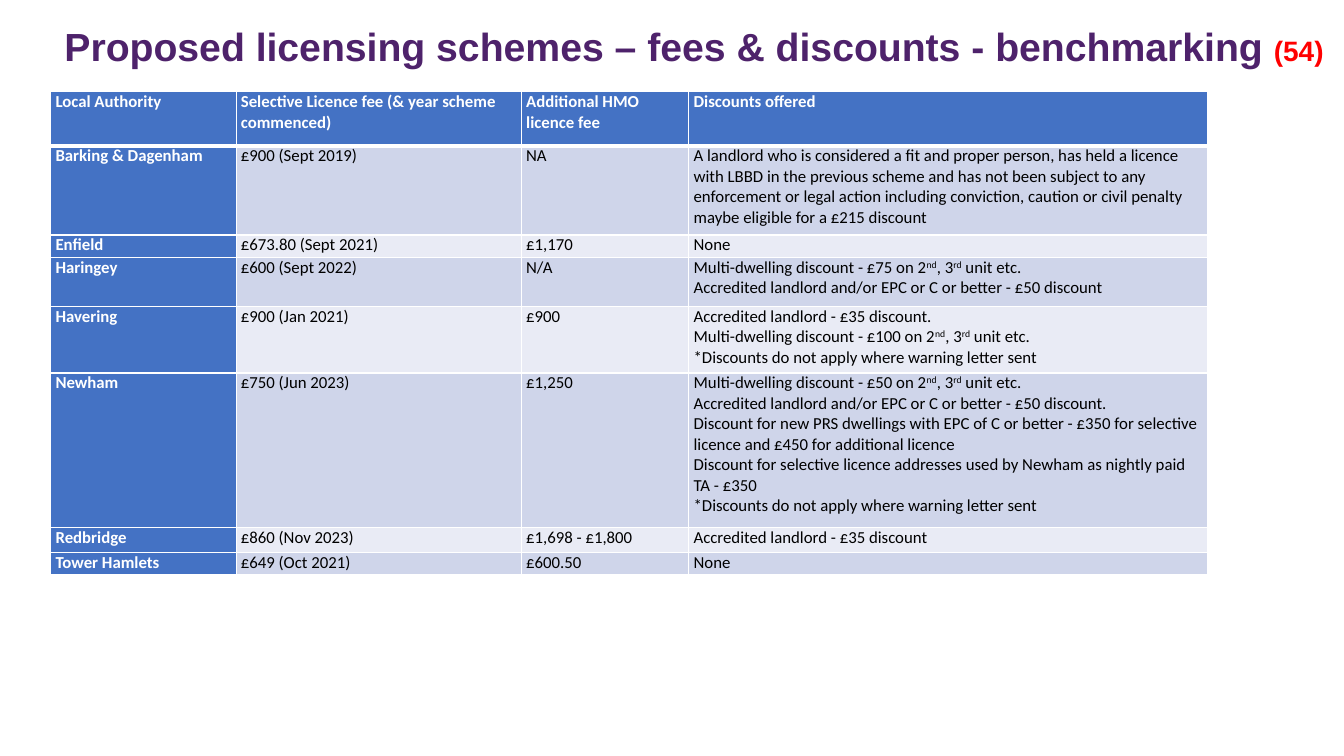
from lxml import etree
from pptx import Presentation
from pptx import util as u
from pptx.dml.color import RGBColor
from pptx.enum import text
from pptx.oxml.ns import qn

COLOURS = {
    "title": "4E226B",
    "page": "FF0000",
    "head": "4472C4",
    "odd": "CFD5EA",
    "even": "E9EBF5",
    "white": "FFFFFF",
    "black": "000000",
}

UNIT = "on 2^nd^, 3^rd^ unit etc."  # ^ marks superscript
WARNING = "*Discounts do not apply where warning letter sent"
ROWS = [
    ("Local Authority", "Selective Licence fee (& year scheme commenced)",
     "Additional HMO licence fee", "Discounts offered"),
    ("Barking & Dagenham", "£900 (Sept 2019)", "NA",
     "A landlord who is considered a fit and proper person, has held a licence "
     "with LBBD in the previous scheme and has not been subject to any "
     "enforcement or legal action including conviction, caution or civil "
     "penalty maybe eligible for a £215 discount"),
    ("Enfield", "£673.80 (Sept 2021)", "£1,170", "None"),
    ("Haringey", "£600 (Sept 2022)", "N/A",
     f"Multi-dwelling discount - £75 {UNIT}\n"
     "Accredited landlord and/or EPC or C or better - £50 discount"),
    ("Havering", "£900 (Jan 2021)", "£900",
     "Accredited landlord - £35 discount.\n"
     f"Multi-dwelling discount - £100 {UNIT}\n{WARNING}"),
    ("Newham", "£750 (Jun 2023)", "£1,250",
     f"Multi-dwelling discount - £50 {UNIT}\n"
     "Accredited landlord and/or EPC or C or better - £50 discount.\n"
     "Discount for new PRS dwellings with EPC of C or better - £350 for "
     "selective licence and £450 for additional licence\n"
     "Discount for selective licence addresses used by Newham as nightly paid "
     f"TA - £350\n{WARNING}"),
    ("Redbridge", "£860 (Nov 2023)", "£1,698 - £1,800",
     "Accredited landlord - £35 discount"),
    ("Tower Hamlets", "£649 (Oct 2021)", "£600.50", "None"),
]
COL_WIDTHS = [4.67, 7.19, 4.22, 13.06]
ROW_HEIGHTS = [1.37, 2.24, 0.56, 1.24, 1.68, 3.89, 0.64, 0.56]


def rgb(name):
    return RGBColor.from_string(COLOURS[name])


class Deck:
    """Holds the style and the current slide."""

    title_font, body_font = "Arial", "Calibri"

    def __init__(self, prs):
        self.s = prs.slides.add_slide(prs.slide_layouts[5])

    def title(self, parts, left, top, width, height):
        sp = self.s.shapes.title
        sp.left, sp.top = u.Cm(left), u.Cm(top)
        sp.width, sp.height = u.Cm(width), u.Cm(height)
        tf = sp.text_frame
        tf.word_wrap = True
        tf.auto_size = text.MSO_AUTO_SIZE.NONE
        tf.vertical_anchor = text.MSO_ANCHOR.TOP
        p = tf.paragraphs[0]
        p.alignment = text.PP_ALIGN.LEFT
        p.line_spacing = 0.9
        for words, size, colour in parts:
            r = p.add_run()
            r.text = words
            r.font.name, r.font.bold = self.title_font, True
            r.font.size = u.Pt(size)
            r.font.color.rgb = rgb(colour)

    def table(self, rows, widths, heights, left, top):
        tbl = self.s.shapes.add_table(
            len(rows), len(widths), u.Cm(left), u.Cm(top),
            u.Cm(sum(widths)), u.Cm(sum(heights))).table
        tbl.first_col = True
        for col, width in zip(tbl.columns, widths):
            col.width = u.Cm(width)
        for row, height in zip(tbl.rows, heights):
            row.height = u.Cm(height)
        for i, row in enumerate(rows):
            for j, words in enumerate(row):
                head = i == 0 or j == 0
                fill = "head" if head else "odd" if i % 2 else "even"
                self.cell(tbl.cell(i, j), words, fill, head)
                # The rule under the header is thicker
                self.borders(tbl.cell(i, j), top=3 if i == 1 else 1,
                             bottom=3 if i == 0 else 1)

    def cell(self, cell, words, fill, head):
        cell.fill.solid()
        cell.fill.fore_color.rgb = rgb(fill)
        cell.margin_left = cell.margin_right = u.Cm(0.12)
        cell.margin_top = cell.margin_bottom = 0
        tf = cell.text_frame
        for n, line in enumerate(words.split("\n")):
            p = tf.add_paragraph() if n else tf.paragraphs[0]
            p.font.name, p.font.size = self.body_font, u.Pt(12)
            p.font.bold = head
            p.font.color.rgb = rgb("white" if head else "black")
            for k, piece in enumerate(line.split("^")):
                r = p.add_run()
                r.text = piece
                if k % 2:
                    r.font._element.set("baseline", "30000")

    def borders(self, cell, top, bottom):
        tcPr = cell._tc.get_or_add_tcPr()
        sides = (("a:lnL", 1), ("a:lnR", 1), ("a:lnT", top), ("a:lnB", bottom))
        for n, (tag, width) in enumerate(sides):
            ln = etree.Element(qn(tag), w=str(u.Pt(width)))
            fill = etree.SubElement(ln, qn("a:solidFill"))
            etree.SubElement(fill, qn("a:srgbClr"), val=COLOURS["white"])
            tcPr.insert(n, ln)  # lines come before the fill


def main():
    prs = Presentation()
    prs.slide_width, prs.slide_height = u.Cm(33.87), u.Cm(19.05)
    deck = Deck(prs)

    # Heading
    deck.title([
        ("Proposed licensing schemes – fees & discounts - benchmarking ", 28, "title"),
        ("(54)", 20, "page"),
    ], 1.37, 0.56, 32.4, 0.91)

    # Fees by local authority
    deck.table(ROWS, COL_WIDTHS, ROW_HEIGHTS, 1.28, 2.31)

    prs.save("out.pptx")


if __name__ == "__main__":
    main()
